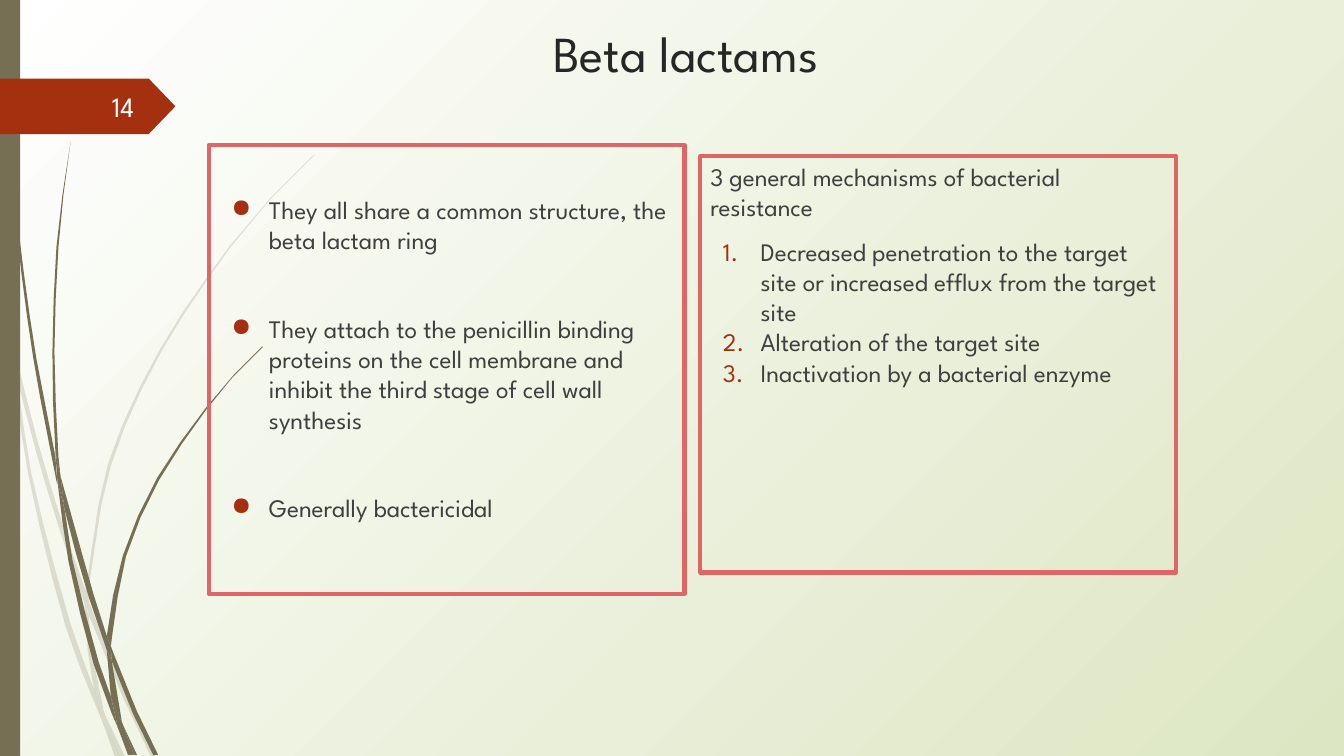
from math import dist
from lxml import etree
from pptx import Presentation
from pptx.dml.color import RGBColor
from pptx.enum.shapes import MSO_SHAPE as SHAPE
from pptx.enum.text import MSO_ANCHOR as ANCHOR, PP_ALIGN as ALIGN
from pptx.oxml.ns import qn
from pptx.util import Cm, Pt

FONT = "League Spartan"
WHITE = RGBColor(0xFE, 0xFF, 0xFF)
BG_FROM = RGBColor(0xFF, 0xFF, 0xFF)
BG_TO = RGBColor(0xDD, 0xE6, 0xC3)
OLIVE = RGBColor(0x76, 0x6F, 0x54)
RUST = RGBColor(0xA5, 0x30, 0x10)
PINK = RGBColor(0xE0, 0x66, 0x66)
TITLE_INK = RGBColor(0x26, 0x26, 0x26)
BODY_INK = RGBColor(0x3F, 0x3F, 0x3F)

# Content
TITLE = "Beta lactams"
NUMBER = "14"
# Paragraphs: text, marker, space before in points
FACTS = [
    ("They all share a common structure, the beta lactam ring", "bullet", 0),
    ("They attach to the penicillin binding proteins on the cell membrane and "
     "inhibit the third stage of cell wall synthesis", "bullet", 41.6),
    ("Generally bactericidal", "bullet", 41.6),
]
RESISTANCE = [
    ("3 general mechanisms of bacterial resistance", None, 0),
    ("Decreased penetration to the target site or increased efflux from the "
     "target site", "number", 10),
    ("Alteration of the target site", "number", 0),
    ("Inactivation by a bacterial enzyme", "number", 0),
]
# Panels: left, top, width, height, top inset (cm), paragraphs
PANELS = [
    (5.26, 3.66, 11.99, 11.3, 1.24, FACTS),
    (17.65, 3.94, 11.99, 10.49, 0.13, RESISTANCE),
]

# Grass blades: the two edges of each, as points in units of 0.0254 cm
PALE_BLADES = [
    ([(0, 282), (9, 322), (11, 350)], [(0, 299), (10, 344), (11, 350)]),
    ([(14, 345), (36, 433), (62, 520), (85, 586)],
     [(17, 376), (36, 449), (58, 522), (84, 599)]),
    ([(88, 596), (92, 607), (127, 692), (155, 751)],
     [(88, 610), (123, 694), (150, 751)]),
    ([(105, 711), (124, 751)], [(105, 711), (119, 751)]),
    ([(11, 350), (17, 376), (31, 469), (70, 619), (93, 683), (101, 714)],
     [(11, 350), (28, 470), (65, 621), (92, 693), (101, 714)]),
    ([(84, 599), (88, 610), (91, 646), (103, 706), (105, 711)],
     [(84, 599), (87, 646), (93, 683), (96, 692), (105, 711)]),
    ([(85, 586), (107, 461), (158, 348), (228, 244), (268, 197), (312, 153)],
     [(88, 596), (88, 584), (110, 462), (160, 349), (229, 245), (268, 198),
      (312, 154)]),
    ([(101, 714), (119, 751)], [(101, 714), (114, 751)]),
    ([(85, 586), (88, 596), (88, 610)], [(84, 599), (88, 608)]),
    ([(93, 683), (96, 692), (105, 711), (119, 751)],
     [(93, 683), (99, 707), (101, 714), (119, 751)]),
]
DARK_BLADES = [
    ([(4, 0), (5, 48), (8, 109), (19, 232), (36, 355), (55, 453), (57, 481)],
     [(3, 0), (4, 48), (7, 110), (17, 233), (33, 355), (56, 477), (57, 481)]),
    ([(60, 472), (93, 590), (106, 631), (106, 645)],
     [(60, 472), (64, 505), (88, 592), (106, 645)]),
    ([(110, 641), (113, 649), (136, 706), (157, 749)],
     [(110, 641), (111, 656), (132, 708), (152, 749)]),
    ([(57, 477), (64, 505), (72, 556), (98, 657), (110, 691), (117, 722)],
     [(57, 477), (68, 557), (93, 659), (111, 708), (117, 722)]),
    ([(70, 141), (62, 193), (56, 245), (52, 349), (55, 449), (60, 472)],
     [(70, 141), (63, 193), (58, 245), (54, 349), (58, 453), (60, 472)]),
    ([(122, 719), (136, 749)], [(122, 719), (133, 749)]),
    ([(55, 449), (60, 472), (64, 505)], [(55, 449), (57, 477), (64, 505)]),
    ([(260, 344), (231, 373), (204, 405), (156, 474), (122, 551), (106, 631),
      (110, 641)],
     [(261, 344), (231, 374), (205, 406), (158, 476), (125, 552), (111, 633),
      (110, 641)]),
    ([(117, 722), (131, 749)], [(117, 722), (127, 749)]),
    ([(106, 645), (111, 656), (121, 716), (122, 719)],
     [(106, 645), (110, 691), (116, 706), (122, 719)]),
    ([(106, 631), (110, 641), (111, 656)],
     [(106, 631), (106, 645), (109, 651), (111, 656)]),
    ([(110, 691), (116, 706), (122, 719), (133, 749)],
     [(110, 691), (116, 717), (117, 722), (130, 749)]),
]


def smooth(points, reach=45):
    """Points about one reach apart on a smooth curve through the given ones."""
    last = len(points) - 1
    slopes = []
    for i in range(last + 1):
        near = points[max(i - 1, 0):i + 2]
        length = sum(dist(a, b) for a, b in zip(near, near[1:]))
        slopes.append([(b - a) / length for a, b in zip(near[0], near[-1])])
    curve = [points[0]]
    for i in range(last):
        a, b = points[i], points[i + 1]
        h = dist(a, b)
        steps = max(1, round(h / reach))
        for t in (k / steps for k in range(1, steps + 1)):
            curve.append(tuple(
                (2*t**3 - 3*t**2 + 1) * a[d] + (3*t**2 - 2*t**3) * b[d]
                + h * ((t**3 - 2*t**2 + t) * slopes[i][d]
                       + (t**3 - t**2) * slopes[i + 1][d])
                for d in (0, 1)))
    return curve


def paint(sp, color):
    sp.shadow.inherit = False
    sp.fill.solid()
    sp.fill.fore_color.rgb = color
    sp.line.fill.background()


def add_blade(edges, opacity):
    outline = smooth(edges[0]) + smooth(edges[1])[::-1]
    outline = [(Cm(x * 0.0254), Cm(y * 0.0254)) for x, y in outline]
    builder = s.shapes.build_freeform(*outline[0])
    builder.add_line_segments(outline[1:])
    sp = builder.convert_to_shape()
    paint(sp, OLIVE)
    if opacity < 100:
        clr = sp._element.spPr.find(".//" + qn("a:srgbClr"))
        etree.SubElement(clr, qn("a:alpha"), val=str(opacity * 1000))


def add_text(left, top, width, height):
    sp = s.shapes.add_textbox(Cm(left), Cm(top), Cm(width), Cm(height))
    sp.text_frame.word_wrap = True
    return sp, sp.text_frame


def write(p, text, size, color, align=ALIGN.LEFT):
    p.text = text
    p.alignment = align
    p.font.name, p.font.size, p.font.color.rgb = FONT, Pt(size), color


def mark(p, marker):
    pPr = p._p.get_or_add_pPr()
    pPr.set("marL", str(Cm(1.27)))
    pPr.set("indent", str(Cm(-0.95)))
    tags = [("a:buClr", {})]
    if marker == "bullet":
        tags.append(("a:buChar", {"char": "●"}))
    else:
        tags.append(("a:buAutoNum", {"type": "arabicPeriod"}))
    items = [etree.Element(qn(tag), attrs) for tag, attrs in tags]
    etree.SubElement(items[0], qn("a:srgbClr"), val=str(RUST))
    defaults = pPr.find(qn("a:defRPr"))
    for item in items:
        defaults.addprevious(item)


prs = Presentation()
prs.slide_width, prs.slide_height = Cm(33.87), Cm(19.05)
s = prs.slides.add_slide(prs.slide_layouts[6])

# Background: radial gradient from the top left corner
fill = s.background.fill
fill.gradient()
for stop, color, position in zip(fill.gradient_stops, (BG_FROM, BG_TO), (0, 1)):
    stop.color.rgb, stop.position = color, position
lin = s._element.find(".//" + qn("a:lin"))
radial = etree.Element(qn("a:path"), {"path": "circle"})
etree.SubElement(radial, qn("a:fillToRect"), r="100000", b="100000")
lin.getparent().replace(lin, radial)

# Grass, side bar and number tag
for blades, opacity in ((PALE_BLADES, 20), (DARK_BLADES, 100)):
    for edges in blades:
        add_blade(edges, opacity)
bar = s.shapes.add_shape(SHAPE.RECTANGLE, 0, 0, Cm(0.51), prs.slide_height)
paint(bar, OLIVE)
tag = s.shapes.add_shape(SHAPE.PENTAGON, 0, Cm(1.98), Cm(4.42), Cm(1.4))
tag.adjustments[0] = 0.48
paint(tag, RUST)
_, tf = add_text(1.47, 2.18, 2.16, 1.02)
tf.vertical_anchor = ANCHOR.MIDDLE
write(tf.paragraphs[0], NUMBER, 20, WHITE, ALIGN.RIGHT)

# Title
_, tf = add_text(4.9, 0.43, 24.77, 1.96)
write(tf.paragraphs[0], TITLE, 36, TITLE_INK, ALIGN.CENTER)

# Panels
for left, top, width, height, inset, paragraphs in PANELS:
    sp, tf = add_text(left, top, width, height)
    sp.line.color.rgb, sp.line.width = PINK, Pt(3)
    tf.margin_top = Cm(inset)
    for i, (text, marker, before) in enumerate(paragraphs):
        p = tf.add_paragraph() if i else tf.paragraphs[0]
        write(p, text, 18, BODY_INK)
        p.space_before = Pt(before)
        if marker:
            mark(p, marker)

prs.save("out.pptx")
